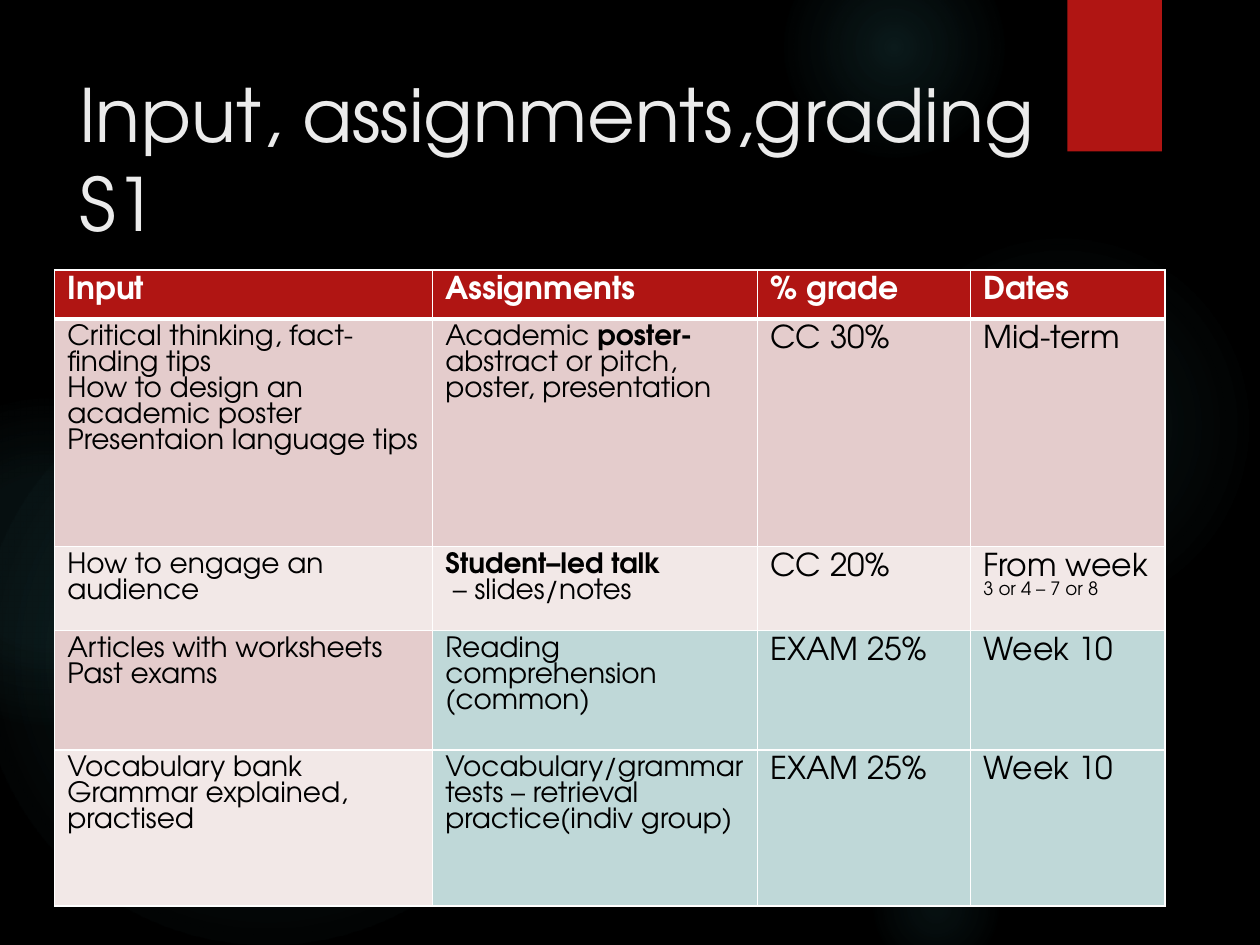
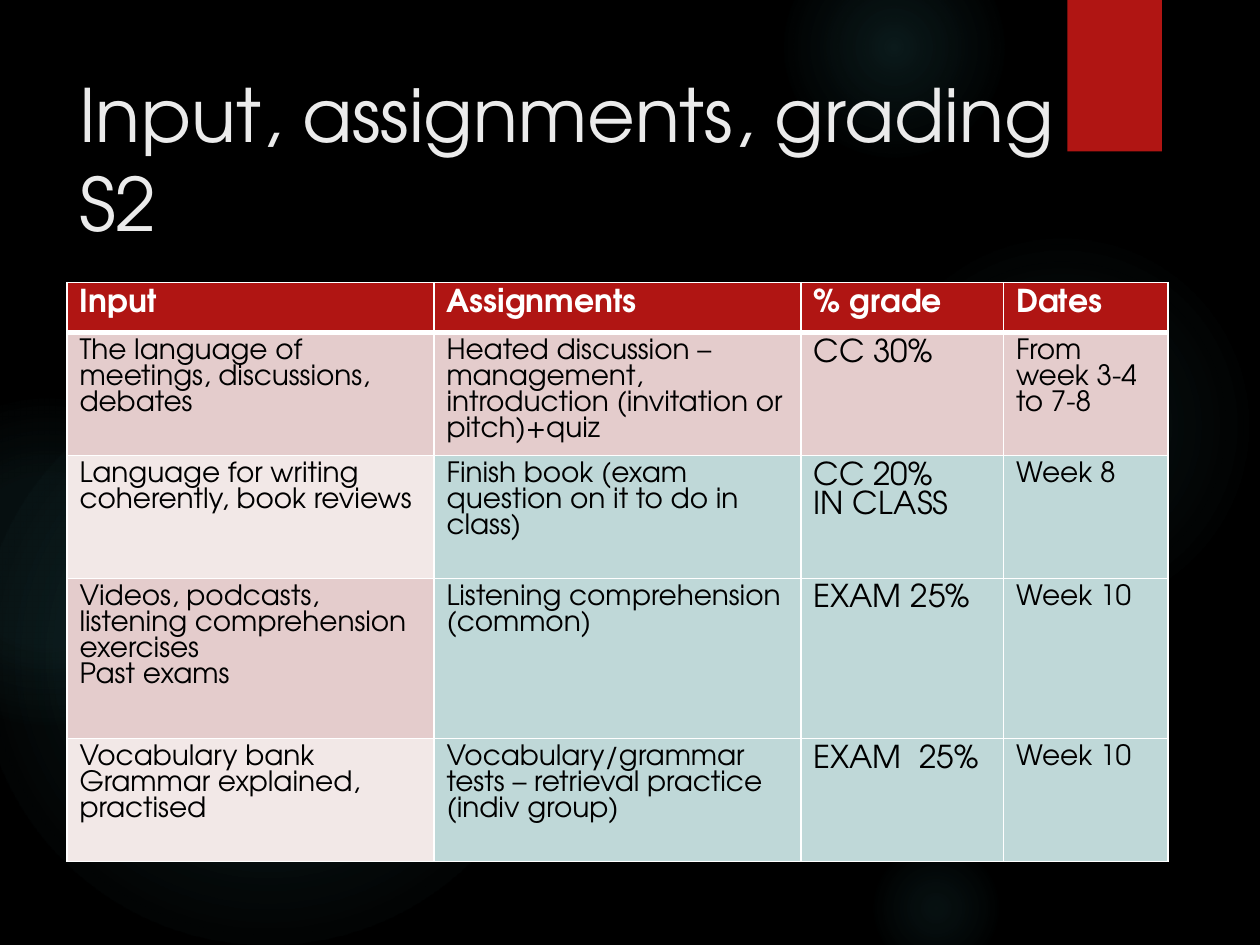
"""Build two slides on input, assignments and grading for both terms."""
from dataclasses import dataclass
from typing import NamedTuple

from lxml import etree
from pptx import Presentation
from pptx.dml.color import RGBColor
from pptx.enum.shapes import MSO_SHAPE
from pptx.enum.text import MSO_ANCHOR, PP_ALIGN
from pptx.util import Pt

OVAL, RECT = MSO_SHAPE.OVAL, MSO_SHAPE.RECTANGLE
LEFT, TOP = PP_ALIGN.LEFT, MSO_ANCHOR.TOP
FONT = "TeX Gyre Adventor"
NS = "http://schemas.openxmlformats.org/drawingml/2006/main"
COLORS = {
    "back": "000000", "red": "B01513", "glow": "50B9C1", "title": "EBEBEB",
    "white": "FFFFFF", "ink": "000000", "rose": "E4CCCC", "pale": "F2E8E7",
    "teal": "BFD8D8",
}
HEADS = ("Input", "Assignments", "% grade", "Dates")


class Halo(NamedTuple):
    """A soft round light; stops are (place, opacity) in percent."""
    left: float
    top: float
    size: float
    stops: tuple


class Part(NamedTuple):
    """A run that may differ from the rest of its cell."""
    text: str
    bold: bool = False
    size: float | None = None


@dataclass
class Plan:
    """One slide: its title and its grading table."""
    title: str
    width: float
    left: float
    top: float
    cols: tuple
    heights: tuple
    sizes: tuple
    teal: int
    rows: list


HALOS = (
    Halo(496, 132, 222, ((0, 7), (36, 6), (69, 0))),
    Halo(448, -36, 126, ((0, 14), (36, 7), (73, 0))),
    Halo(496, 480, 78, ((0, 9), (36, 5), (66, 0))),
    Halo(-12, 210, 330, ((0, 11), (36, 10), (75, 0))),
    Halo(-66, 228, 186, ((0, 8), (36, 8), (72, 0))),
)

PLANS = (
    Plan("Input, assignments,grading S1", 564.5, 31.25, 154.25,
         (216, 185.75, 121.75, 111), (28, 130, 48, 68.25, 89.25),
         (16, 16, 18, 18), 3, [
             (["Critical thinking, fact-finding tips",
               "How to design an academic poster",
               "Presentaion language tips"],
              [(Part("Academic "), Part("poster-", True),
                Part(" abstract or pitch, poster, presentation"))],
              ["CC 30%"], ["Mid-term"]),
             (["How to engage an audience"],
              [(Part("Student–led talk", True),), " – slides/notes"],
              ["CC 20%"],
              [(Part("From week "), Part("3 or 4 – 7 or 8", size=10.5))]),
             (["Articles with worksheets", "Past exams"],
              ["Reading comprehension (common)"],
              ["EXAM 25%"], ["Week 10"]),
             (["Vocabulary bank", "Grammar explained, practised"],
              ["Vocabulary/grammar tests – retrieval practice(indiv group)"],
              ["EXAM 25%"], ["Week 10"]),
         ]),
    Plan("Input, assignments, grading S2", 596, 38.25, 161.5,
         (209.75, 209.75, 115.75, 94), (28.5, 70.25, 70.25, 91.5, 70.25),
         (16, 16, 18, 16), 2, [
             (["The language of meetings, discussions, debates"],
              ["Heated discussion – management, introduction "
               "(invitation or pitch)+quiz"],
              ["CC 30%"], ["From week 3-4 to 7-8"]),
             (["Language for writing coherently, book reviews"],
              ["Finish book (exam question on it to do in class)"],
              ["CC 20%", "IN CLASS"], ["Week 8"]),
             (["Videos, podcasts, listening comprehension exercises",
               "Past exams"],
              ["Listening comprehension", "(common)"],
              ["EXAM 25%"], ["Week 10"]),
             (["Vocabulary bank", "Grammar explained, practised"],
              ["Vocabulary/grammar tests – retrieval practice",
               "(indiv group)"],
              ["EXAM  25%"], ["Week 10"]),
         ]),
)


def tint(name: str) -> RGBColor:
    """Return a named colour."""
    return RGBColor.from_string(COLORS[name])


def node(text: str):
    """Parse a piece of drawing XML whose root has no namespace yet."""
    return etree.fromstring(text.replace(">", f' xmlns:a="{NS}">', 1))


def set_font(font, size: float, color: str, bold: bool = False) -> None:
    """Set face, size, colour and weight."""
    font.name, font.size, font.bold = FONT, Pt(size), bold
    font.color.rgb = tint(color)


def add_plain(slide, kind, left: float, top: float, wide: float, high: float):
    """Add a red shape with neither line nor shadow."""
    shape = slide.shapes.add_shape(kind, Pt(left), Pt(top), Pt(wide), Pt(high))
    shape.shadow.inherit = False
    shape.fill.solid()
    shape.fill.fore_color.rgb = tint("red")
    shape.line.fill.background()
    return shape


def add_halo(slide, halo: Halo):
    """Add a light that fades out from its centre."""
    shape = add_plain(slide, OVAL, halo.left, halo.top, halo.size, halo.size)
    stops = "".join(
        f'<a:gs pos="{pos * 1000}"><a:srgbClr val="{COLORS["glow"]}">'
        f'<a:alpha val="{alpha * 1000}"/></a:srgbClr></a:gs>'
        for pos, alpha in halo.stops)
    grad = node(
        f'<a:gradFill rotWithShape="1"><a:gsLst>{stops}</a:gsLst>'
        '<a:path path="circle"><a:fillToRect l="50000" t="50000" '
        'r="50000" b="50000"/></a:path></a:gradFill>')
    props = shape.element.spPr
    props.replace(props.find(f"{{{NS}}}solidFill"), grad)
    return shape


def add_flag(slide):
    """Add the red flag at the top with its soft shadow."""
    flag = add_plain(slide, RECT, 610, 0, 54, 86.5)
    flag.element.spPr.find(f"{{{NS}}}effectLst").append(node(
        f'<a:outerShdw blurRad="{Pt(3)}" dist="{Pt(2)}" dir="5400000" '
        f'rotWithShape="0"><a:srgbClr val="{COLORS["back"]}">'
        '<a:alpha val="45000"/></a:srgbClr></a:outerShdw>'))
    return flag


def dress(layout, slide) -> None:
    """Give the layout its dark ground, lights and flag."""
    layout.background.fill.solid()
    layout.background.fill.fore_color.rgb = tint("back")
    decor = [add_halo(slide, halo) for halo in HALOS] + [add_flag(slide)]
    for shape in decor:
        layout.shapes.element.append(shape.element)


def add_title(slide, plan: Plan) -> None:
    """Place and format the title."""
    title = slide.shapes.title
    title.left, title.top = Pt(38), Pt(36)
    title.width, title.height = Pt(plan.width), Pt(110)
    title.text_frame.text = plan.title
    title.text_frame.vertical_anchor = TOP
    para = title.text_frame.paragraphs[0]
    para.alignment = LEFT
    set_font(para.font, 42, "title")


def set_edges(cell, row: int) -> None:
    """Draw white cell borders, thick below the header."""
    widths = {"L": 1, "R": 1, "T": 3 if row == 1 else 1,
              "B": 3 if row == 0 else 1}
    props = cell._tc.get_or_add_tcPr()
    for side, width in widths.items():
        props.append(node(
            f'<a:ln{side} w="{Pt(width)}"><a:solidFill><a:srgbClr '
            f'val="{COLORS["white"]}"/></a:solidFill></a:ln{side}>'))


def fill_cell(cell, lines: list, row: int, size: float, fill: str) -> None:
    """Write the lines of one cell and colour it."""
    set_edges(cell, row)
    cell.fill.solid()
    cell.fill.fore_color.rgb = tint(fill)
    frame = cell.text_frame
    for index, line in enumerate(lines):
        para = frame.add_paragraph() if index else frame.paragraphs[0]
        set_font(para.font, size, "ink" if row else "white", row == 0)
        for part in [Part(line)] if isinstance(line, str) else line:
            run = para.add_run()
            run.text = part.text
            if part.bold:
                run.font.bold = True
            if part.size:
                run.font.size = Pt(part.size)


def pick_fill(plan: Plan, row: int, col: int) -> str:
    """Choose the fill of a cell from its place."""
    if row == 0:
        return "red"
    if col and row >= plan.teal:
        return "teal"
    return "rose" if row % 2 else "pale"


def add_grid(slide, plan: Plan) -> None:
    """Add the grading table."""
    rows = [tuple([head] for head in HEADS)] + plan.rows
    table = slide.shapes.add_table(
        len(rows), len(HEADS), Pt(plan.left), Pt(plan.top),
        Pt(sum(plan.cols)), Pt(sum(plan.heights))).table
    for col, width in enumerate(plan.cols):
        table.columns[col].width = Pt(width)
    for row, cells in enumerate(rows):
        table.rows[row].height = Pt(plan.heights[row])
        for col, lines in enumerate(cells):
            size = plan.sizes[col] if row else 18
            fill_cell(table.cell(row, col), lines, row, size,
                      pick_fill(plan, row, col))


def main() -> None:
    """Build and save the deck."""
    deck = Presentation()
    deck.slide_width, deck.slide_height = Pt(720), Pt(540)
    layout = deck.slide_layouts[5]
    for index, plan in enumerate(PLANS):
        slide = deck.slides.add_slide(layout)
        if index == 0:
            dress(layout, slide)
        add_title(slide, plan)
        add_grid(slide, plan)
    deck.save("out.pptx")


if __name__ == "__main__":
    main()
